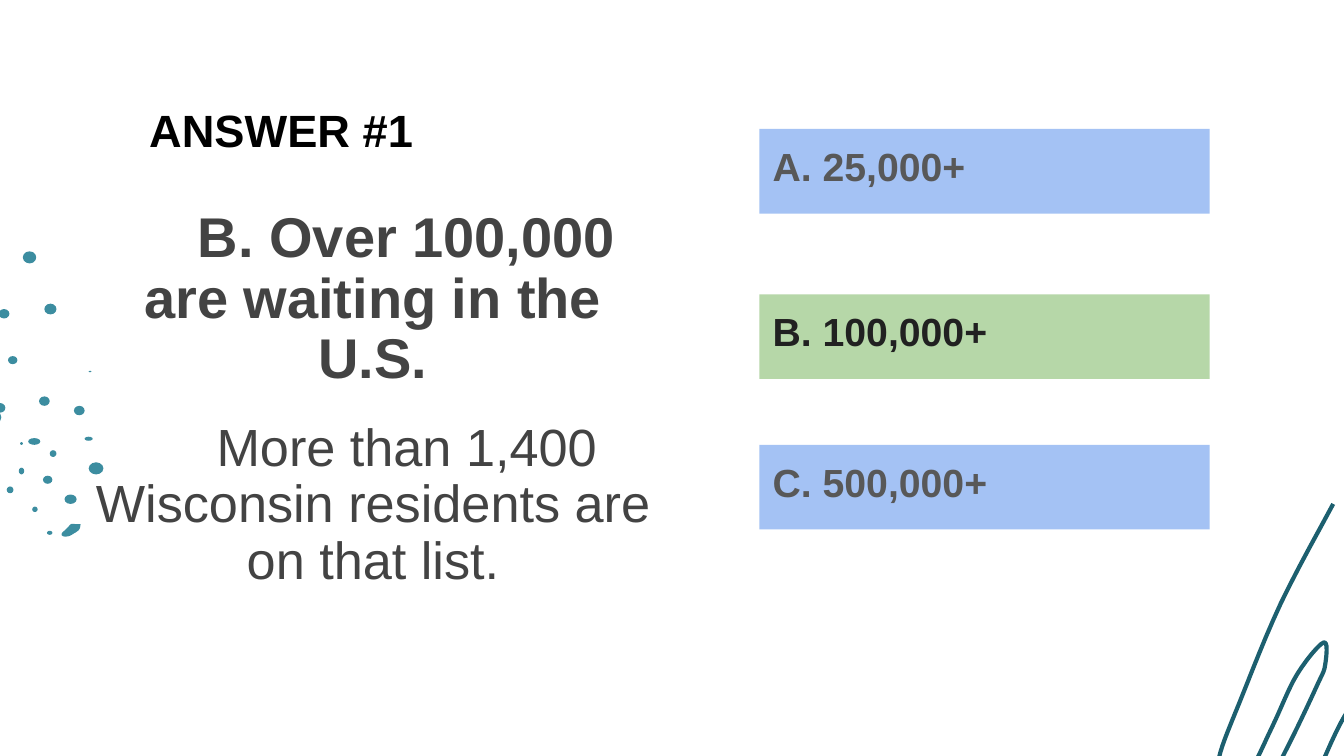
from dataclasses import dataclass

from lxml.etree import SubElement
from pptx import Presentation
from pptx.dml.color import RGBColor
from pptx.enum.shapes import MSO_SHAPE
from pptx.enum.text import MSO_ANCHOR, PP_ALIGN
from pptx.oxml.ns import qn
from pptx.util import Inches, Pt


@dataclass(frozen=True)
class Theme:
    font: str = "Arial"
    title: str = "000000"
    body: str = "434343"
    muted: str = "585858"
    strong: str = "212121"
    option: str = "A4C2F4"
    correct: str = "B6D7A8"
    dots: str = "3C8DA0"
    scribble: str = "1C5F6F"
    title_size: float = 24.2
    answer_size: float = 30
    detail_size: float = 28
    option_size: float = 21


@dataclass(frozen=True)
class Box:
    left: float
    top: float
    width: float
    height: float

    def emu(self):
        return [Inches(v) for v in (self.left, self.top, self.width, self.height)]


THEME = Theme()
PAGE = Box(0, 0, 10, 10 * 9 / 16)
CELL = 0.01  # fine grid for the decorations, in inches

# Dots as left, top, width, height in cells from the corner of their box
DOTS = [
    (-12, 118, 13, 11), (15, 142, 2, 2), (14, 161, 4, 5), (24, 190, 4, 4),
    (35, 208, 4, 3), (48, 181, 9, 7), (32, 167, 7, 6), (5, 175, 5, 5),
    (37, 148, 5, 5), (21, 139, 9, 5), (29, 108, 8, 7), (-3, 113, 7, 7),
    (6, 78, 7, 6), (-1, 43, 8, 7), (66, 89, 2, 1), (55, 115, 8, 7),
    (63, 138, 6, 3), (66, 157, 11, 9), (33, 39, 9, 8), (17, 0, 10, 9),
]
LEAF = [(56, 203), (53, 203), (50, 206), (46, 210), (47, 212), (51, 212),
        (55, 210), (59, 207), (60, 203)]

# Centre line of the scribble in cells from the corner of its box
SCRIBBLE = [
    (88, 1), (49, 75), (19, 147), (4, 186), (3, 204), (10, 213), (23, 206),
    (43, 166), (61, 128), (81, 104), (82, 121), (76, 136), (59, 172), (32, 226),
    (26, 246), (28, 262), (38, 265), (52, 256), (66, 226), (90, 171), (106, 144),
    (121, 123), (135, 114), (136, 141), (121, 178), (96, 224), (71, 281),
    (69, 294), (78, 297), (91, 284), (114, 238), (136, 186), (156, 155),
    (171, 144), (180, 156), (172, 188), (136, 249), (108, 300), (106, 318),
    (121, 324), (136, 314), (149, 290), (197, 191),
]


def color(value):
    return RGBColor.from_string(value)


def set_font(para, size, value, bold=True):
    para.font.name = THEME.font
    para.font.size = Pt(size)
    para.font.bold = bold
    para.font.color.rgb = color(value)


def set_frame(frame):
    frame.word_wrap = True
    frame.vertical_anchor = MSO_ANCHOR.TOP
    frame.margin_left = frame.margin_right = Inches(0.1)
    frame.margin_top = frame.margin_bottom = Inches(0.1)


def paint(shape, value):
    shape.shadow.inherit = False
    shape.fill.solid()
    shape.fill.fore_color.rgb = color(value)
    shape.line.fill.background()


def smooth_curve(points, steps=6):
    """Catmull-Rom curve through the points."""
    ends = [points[0], *points, points[-1]]
    curve = []
    for a, b, c, d in zip(ends, ends[1:], ends[2:], ends[3:]):
        for step in range(steps):
            t = step / steps
            curve.append(tuple(
                b[i] + 0.5 * t * (c[i] - a[i]
                + t * (2 * a[i] - 5 * b[i] + 4 * c[i] - d[i]
                + t * (3 * (b[i] - c[i]) + d[i] - a[i])))
                for i in (0, 1)))
    return curve + [points[-1]]


def add_outline(page, box, points, close):
    spots = [(Inches(box.left + x * CELL), Inches(box.top + y * CELL))
             for x, y in points]
    builder = page.shapes.build_freeform(*spots[0])
    builder.add_line_segments(spots[1:], close=close)
    return builder.convert_to_shape()


def add_dots(page, box):
    for x, y, width, height in DOTS:
        spot = Box(box.left + x * CELL, box.top + y * CELL, width * CELL, height * CELL)
        paint(page.shapes.add_shape(MSO_SHAPE.OVAL, *spot.emu()), THEME.dots)
    paint(add_outline(page, box, smooth_curve(LEAF), True), THEME.dots)


def add_scribble(page, box):
    stroke = add_outline(page, box, smooth_curve(SCRIBBLE), False)
    stroke.shadow.inherit = False
    stroke.fill.background()
    stroke.line.color.rgb = color(THEME.scribble)
    stroke.line.width = Pt(2.25)


def place(shape, box):
    shape.left, shape.top, shape.width, shape.height = box.emu()


def fill_title(page, box, text):
    title = page.shapes.title
    place(title, box)
    set_frame(title.text_frame)
    title.text_frame.text = text
    para = title.text_frame.paragraphs[0]
    para.alignment = PP_ALIGN.LEFT
    set_font(para, THEME.title_size, THEME.title)


def fill_answer(page, box, answer, detail):
    body = page.placeholders[1]
    place(body, box)
    frame = body.text_frame
    set_frame(frame)
    frame.text = f"{answer}\n{detail}"
    styles = [(THEME.answer_size, True, 0), (THEME.detail_size, False, 16)]
    for para, (size, bold, before) in zip(frame.paragraphs, styles):
        props = para._p.get_or_add_pPr()
        props.set("marL", "0")
        props.set("indent", str(Inches(0.5)))
        SubElement(props, qn("a:buNone"))
        para.alignment = PP_ALIGN.CENTER
        para.line_spacing = 0.9
        para.space_before = Pt(before)
        set_font(para, size, THEME.body, bold)


def add_option(page, box, text, correct):
    bar = page.shapes.add_shape(MSO_SHAPE.RECTANGLE, *box.emu())
    paint(bar, THEME.correct if correct else THEME.option)
    set_frame(bar.text_frame)
    bar.text_frame.text = text
    para = bar.text_frame.paragraphs[0]
    para.alignment = PP_ALIGN.LEFT
    set_font(para, THEME.option_size, THEME.strong if correct else THEME.muted)


def add_options(page, box, options, correct):
    for text, offset in options:
        bar = Box(box.left, box.top + offset, box.width, 0.63)
        add_option(page, bar, text, text == correct)


def main():
    deck = Presentation()
    deck.slide_width, deck.slide_height = Inches(PAGE.width), Inches(PAGE.height)
    page = deck.slides.add_slide(deck.slide_layouts[1])

    # Decorations
    add_dots(page, Box(0, 1.87, 0.77, 2.12))
    add_scribble(page, Box(9.04, 3.74, 1.98, 3.24))

    # Title and answer
    fill_title(page, Box(1.01, 0.66, 8.92, 0.63), "ANSWER #1")
    fill_answer(page, Box(0.55, 1.46, 4.45, 3.84),
                "B. Over 100,000 are waiting in the U.S.",
                "More than 1,400 Wisconsin residents are on that list.")

    # Answer options
    options = [("A. 25,000+", 0), ("B. 100,000+", 1.23), ("C. 500,000+", 2.35)]
    add_options(page, Box(5.65, 0.96, 3.35, 2.98), options, "B. 100,000+")

    deck.save("out.pptx")


if __name__ == "__main__":
    main()
